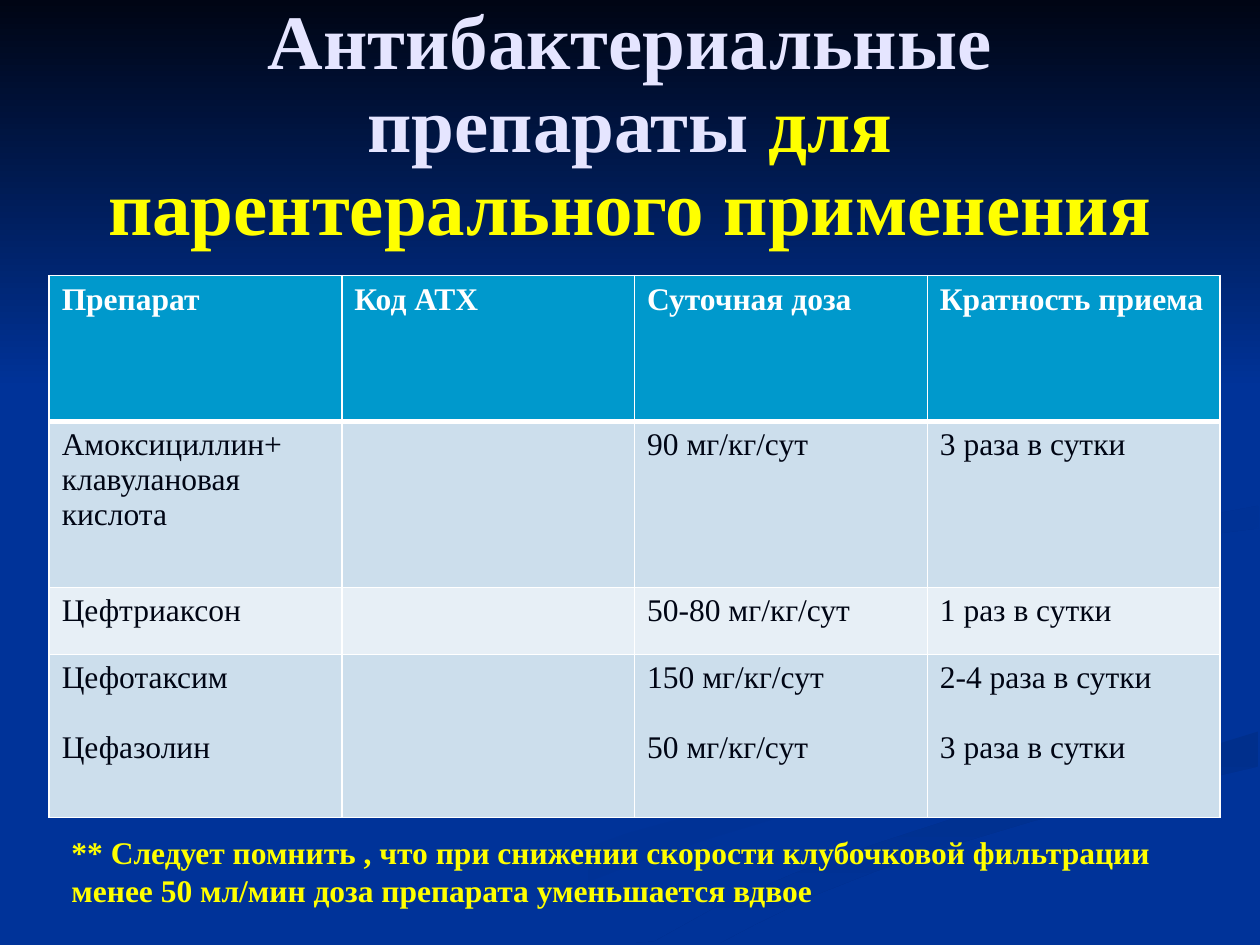
from dataclasses import dataclass

from lxml import etree
from pptx import Presentation
from pptx import util as u
from pptx.dml.color import RGBColor
from pptx.enum import text as t
from pptx.oxml import ns

Pt = u.Pt


@dataclass(frozen=True)
class Theme:
    font: str = "Times New Roman"
    title_size: int = 44
    text_size: int = 18
    back: str = "003399"
    night: str = "000514"
    title: str = "E5E5FF"
    accent: str = "FFFF00"
    white: str = "FFFFFF"
    header: str = "0099CC"
    band_dark: str = "CCDEEC"
    band_light: str = "E7EFF6"


theme = Theme()


def add_run(paragraph, wording, size, color, bold):
    run = paragraph.add_run()
    run.text = wording
    run.font.color.rgb = RGBColor.from_string(color)
    for key, value in {"name": theme.font, "size": Pt(size), "bold": bold}.items():
        setattr(run.font, key, value)


def add_border(cell, side, width):
    line = etree.SubElement(cell._tc.get_or_add_tcPr(), ns.qn(f"a:{side}"), w=str(Pt(width)))
    fill = etree.SubElement(line, ns.qn("a:solidFill"))
    etree.SubElement(fill, ns.qn("a:srgbClr"), val=theme.white)


prs = Presentation()
prs.slide_width, prs.slide_height = Pt(720), Pt(540)
slide = prs.slides.add_slide(prs.slide_layouts[5])

# Background: faint ribbons under a dark sky; outlines in points
slide.background.fill.solid()
slide.background.fill.fore_color.rgb = RGBColor.from_string(theme.back)
long_ribbon = [
    (562, 398), (536, 387), (491, 374), (442, 357), (423, 346), (414, 335), (414, 330),
    (411, 337), (415, 346), (427, 354), (454, 364), (489, 374), (524, 385), (548, 394),
    (562, 400), (566, 408), (562, 417), (546, 425), (514, 436), (469, 446), (417, 460),
    (359, 476), (300, 497), (243, 523), (216, 539), (260, 539), (310, 514), (359, 495),
    (406, 479), (449, 466), (487, 456), (519, 449), (544, 443), (562, 436), (572, 427),
    (576, 418), (572, 408)]
low_ribbon = [
    (374, 538), (362, 539), (411, 539), (432, 528), (467, 511), (500, 498), (541, 484),
    (591, 469), (650, 454), (719, 438), (719, 418), (693, 426), (650, 439), (598, 453),
    (550, 466), (501, 482), (454, 499), (410, 518)]
high_ribbon = [
    (562, 331), (563, 338), (574, 348), (595, 357), (580, 347), (580, 340), (588, 330),
    (607, 323), (645, 313), (687, 306), (719, 302), (719, 289), (671, 298), (623, 305),
    (591, 312), (569, 322)]
sky = [(0, 0), (0, 222), (720, 222), (720, 0)]
for outline, start, end, angle in [
    (long_ribbon, theme.back, "003193", 0),
    (low_ribbon, "002F8C", theme.back, 270),
    (high_ribbon, "003091", theme.back, 315),
    (sky, theme.night, theme.back, 270),
]:
    builder = slide.shapes.build_freeform(*outline[0], scale=Pt(1))
    builder.add_line_segments(outline[1:], close=True)
    area = builder.convert_to_shape()
    area.shadow.inherit = False
    area.line.fill.background()
    area.fill.gradient()
    area.fill.gradient_angle = angle
    for stop, color, position in zip(area.fill.gradient_stops, (start, end), (0, 1)):
        stop.color.rgb = RGBColor.from_string(color)
        stop.position = position

# Title, brought in front of the background; the box holds all three lines
heading = slide.shapes.title
slide.shapes._spTree.append(heading._element)
for key, value in {"left": 36, "top": 0, "width": 648, "height": 146}.items():
    setattr(heading, key, Pt(value))
for key, value in {"word_wrap": True, "auto_size": t.MSO_AUTO_SIZE.NONE,
                   "vertical_anchor": t.MSO_ANCHOR.MIDDLE,
                   "margin_top": 0, "margin_bottom": 0}.items():
    setattr(heading.text_frame, key, value)
heading_line = heading.text_frame.paragraphs[0]
heading_line.alignment = t.PP_ALIGN.CENTER
heading_line.line_spacing = 0.9
add_run(heading_line, "Антибактериальные препараты ", theme.title_size, theme.title, True)
add_run(heading_line, "для парентерального применения", theme.title_size, theme.accent, True)

# Dosage table: a cell is a list of paragraphs
dosage = [
    [["Препарат"], ["Код АТХ"], ["Суточная доза"], ["Кратность приема"]],
    [["Амоксициллин+ клавулановая кислота"], [], ["90 мг/кг/сут"], ["3 раза в сутки"]],
    [["Цефтриаксон"], [], ["50-80 мг/кг/сут"], ["1 раз в сутки"]],
    [["Цефотаксим", "Цефазолин"], [], ["150 мг/кг/сут", "50 мг/кг/сут"],
     ["2-4 раза в сутки", "3 раза в сутки"]],
]
row_heights = [83.2, 95, 38.2, 93.2]
row_fills = [theme.header, theme.band_dark, theme.band_light, theme.band_dark]
table = slide.shapes.add_table(4, 4, Pt(28.1), Pt(157.5), Pt(669.2), Pt(309.6)).table
for column in table.columns:
    column.width = Pt(167.3)
for r, row in enumerate(dosage):
    table.rows[r].height = Pt(row_heights[r])
    is_header = r == 0
    for c, wordings in enumerate(row):
        cell = table.cell(r, c)
        for side in ("lnL", "lnR", "lnT", "lnB"):
            thick = (is_header and side == "lnB") or (r == 1 and side == "lnT")
            add_border(cell, side, 3 if thick else 1)
        cell.fill.solid()
        cell.fill.fore_color.rgb = RGBColor.from_string(row_fills[r])
        for i, wording in enumerate(wordings):
            frame = cell.text_frame
            paragraph = frame.add_paragraph() if i else frame.paragraphs[0]
            paragraph.space_before = Pt(20 * i)
            add_run(paragraph, wording, theme.text_size,
                    theme.white if is_header else theme.night, is_header)

# Footnote
footnote = slide.shapes.add_textbox(Pt(33.8), Pt(472.3), Pt(664), Pt(51)).text_frame
footnote.word_wrap = True
add_run(footnote.paragraphs[0],
        "** Следует помнить , что при снижении скорости клубочковой фильтрации "
        "менее 50 мл/мин доза препарата уменьшается вдвое",
        theme.text_size, theme.accent, True)

prs.save("out.pptx")
